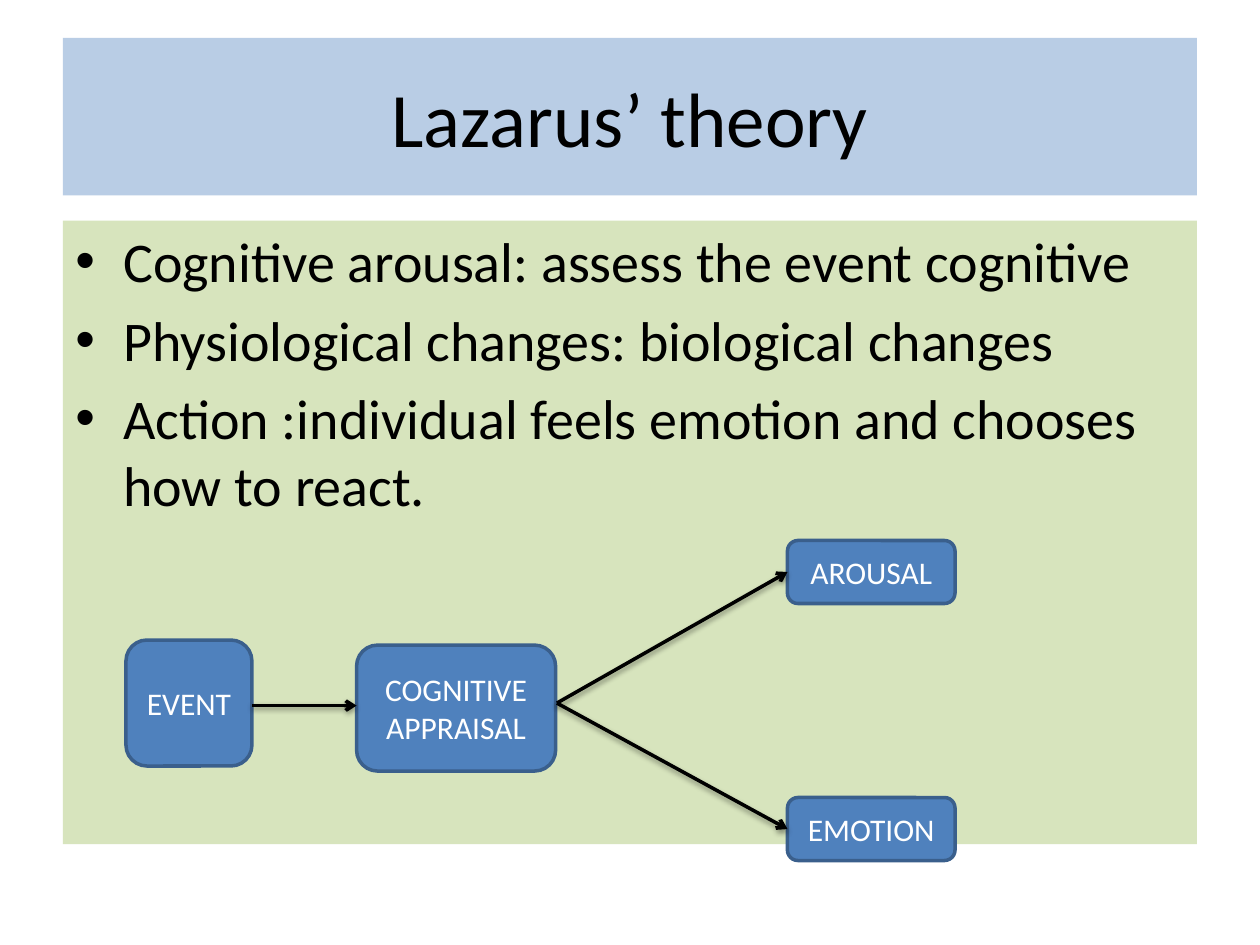
import pptx
import pptx.util
import pptx.dml.color
import pptx.enum.shapes
import pptx.enum.text
import pptx.oxml
import pptx.oxml.ns
import lxml.etree

Inches, Pt = pptx.util.Inches, pptx.util.Pt
Align = pptx.enum.text.PP_ALIGN
Anchor = pptx.enum.text.MSO_ANCHOR
Shape = pptx.enum.shapes.MSO_SHAPE
HUES = {"title": "B9CDE5", "body": "D7E4BD", "node": "4F81BD",
        "edge": "3A5F8C", "ink": "000000", "white": "FFFFFF"}
SHADOW = ('<a:effectLst %s><a:outerShdw blurRad="40000" dist="20000" '
          'dir="5400000" rotWithShape="0"><a:srgbClr val="%s">'
          '<a:alpha val="38000"/></a:srgbClr></a:outerShdw></a:effectLst>'
          % (pptx.oxml.ns.nsdecls("a"), HUES["ink"]))


def color(name):
    return pptx.dml.color.RGBColor.from_string(HUES[name])


def write(frame, lines, size=18, hue="ink", align=Align.CENTER,
          anchor=Anchor.MIDDLE, bullet=None, gap=0):
    """Fill a text frame with one paragraph per line."""
    frame.word_wrap = True
    frame.vertical_anchor = anchor
    for i, line in enumerate(lines):
        para = frame.paragraphs[0] if i == 0 else frame.add_paragraph()
        para.text = line
        para.alignment = align
        para.space_before = Pt(gap if i else 0)
        if bullet:
            props = para._p.get_or_add_pPr()
            props.set("marL", str(Inches(0.38)))
            props.set("indent", str(-Inches(0.38)))
            font = lxml.etree.SubElement(props, pptx.oxml.ns.qn("a:buFont"))
            font.set("typeface", "Arial")
            mark = lxml.etree.SubElement(props, pptx.oxml.ns.qn("a:buChar"))
            mark.set("char", bullet)
        for run in para.runs:
            run.font.name = "Calibri"
            run.font.size = Pt(size)
            run.font.color.rgb = color(hue)


class Deck:
    """Holds the style and the current slide."""

    def __init__(self):
        self.file = pptx.Presentation()
        self.file.slide_width = Inches(10)
        self.file.slide_height = Inches(7.5)
        self.slide = self.file.slides.add_slide(self.file.slide_layouts[6])
        self.width = Pt(2)

    def shape(self, kind, hue, left, top, width, height):
        item = self.slide.shapes.add_shape(
            kind, Inches(left), Inches(top), Inches(width), Inches(height))
        item.shadow.inherit = False
        item.fill.solid()
        item.fill.fore_color.rgb = color(hue)
        return item

    def panel(self, hue, top, height, lines, **style):
        item = self.shape(Shape.RECTANGLE, hue, 0.5, top, 9, height)
        item.line.fill.background()
        write(item.text_frame, lines, **style)

    def node(self, text, left, top, width, height):
        item = self.shape(Shape.ROUNDED_RECTANGLE, "node",
                          left, top, width, height)
        item.line.color.rgb = color("edge")
        item.line.width = self.width
        write(item.text_frame, [text], hue="white")
        return item

    def arrow(self, x1, y1, x2, y2, goal=None):
        item = self.slide.shapes.add_connector(
            pptx.enum.shapes.MSO_CONNECTOR.STRAIGHT,
            Inches(x1), Inches(y1), Inches(x2), Inches(y2))
        if goal is not None:
            item.end_connect(goal, 1)
        item.line.color.rgb = color("ink")
        item.line.width = self.width
        tail = lxml.etree.SubElement(item.line._get_or_add_ln(),
                                     pptx.oxml.ns.qn("a:tailEnd"))
        tail.set("type", "arrow")
        item._element.spPr.append(pptx.oxml.parse_xml(SHADOW))


def main():
    deck = Deck()

    # Title and points
    deck.panel("title", 0.3, 1.25, ["Lazarus’ theory"], size=44)
    deck.panel("body", 1.75, 4.95, [
        "Cognitive arousal: assess the event cognitive",
        "Physiological changes: biological changes",
        "Action :individual feels emotion and chooses how to react.",
    ], size=32, align=Align.LEFT, anchor=Anchor.TOP, bullet="•", gap=6.4)

    # Event leads to appraisal
    deck.node("EVENT", 1, 5.08, 1, 1)
    deck.node("COGNITIVE APPRAISAL", 2.83, 5.12, 1.58, 1)
    deck.arrow(2, 5.6, 2.83, 5.6)

    # Appraisal leads to both outcomes
    for text, top in (("AROUSAL", 4.29), ("EMOTION", 6.33)):
        goal = deck.node(text, 6.25, top, 1.33, 0.5)
        deck.arrow(4.42, 5.58, 6.25, top + 0.25, goal)

    deck.file.save("out.pptx")


if __name__ == "__main__":
    main()
